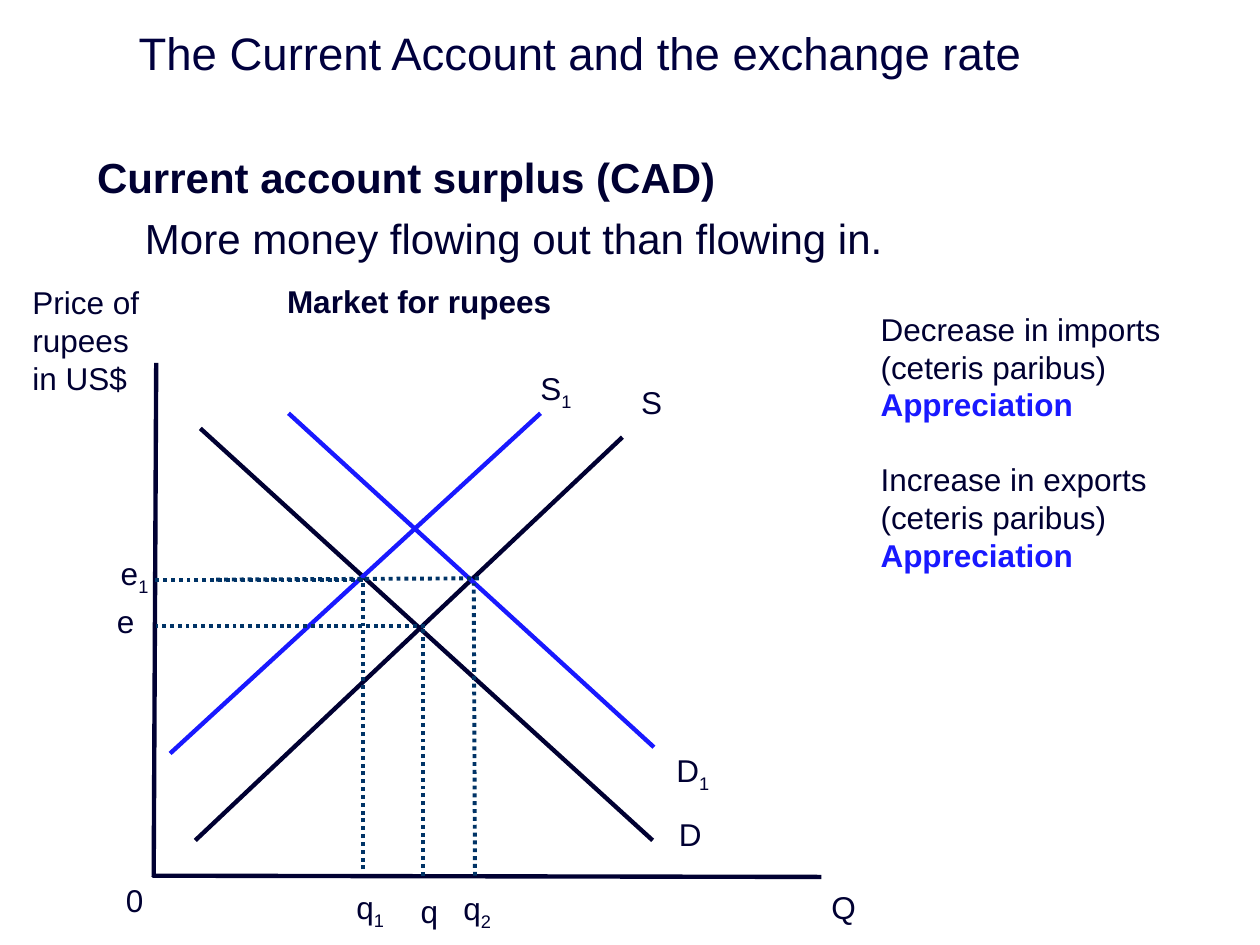
from lxml import etree
from pptx import Presentation
from pptx.dml.color import RGBColor
from pptx.enum.dml import MSO_LINE_DASH_STYLE as DASH
from pptx.enum.shapes import MSO_CONNECTOR
from pptx.enum.text import MSO_ANCHOR, MSO_AUTO_SIZE as AUTO, PP_ALIGN
from pptx.oxml.ns import qn
from pptx.util import Inches, Pt

NAVY, BLUE, TEAL, TITLE = "000032", "1919FF", "003366", "00003E"


def rgb(value):
    return RGBColor.from_string(value)


class Diagram:
    font = "Arial"

    def __init__(self, slide):
        self.s = slide

    def style(self, p, size, color=NAVY, bold=False):
        p.alignment = PP_ALIGN.LEFT
        for r in p.runs:
            r.font.name = self.font
            r.font.size = Pt(size)
            r.font.bold = bold
            r.font.color.rgb = rgb(color)

    def place(self, sp, x, y, w, h):
        sp.left, sp.top = Inches(x), Inches(y)
        sp.width, sp.height = Inches(w), Inches(h)

    def title(self, text, *box):
        sp = self.s.shapes.title
        self.place(sp, *box)
        tf = sp.text_frame
        tf.text = text
        tf.auto_size = AUTO.NONE
        tf.vertical_anchor = MSO_ANCHOR.MIDDLE
        self.style(tf.paragraphs[0], 26, TITLE)

    def body(self, heading, detail, *box):
        sp = self.s.placeholders[1]
        self.place(sp, *box)
        tf = sp.text_frame
        tf.text = f"{heading}\n{detail}"
        tf.auto_size = AUTO.NONE
        for i, p in enumerate(tf.paragraphs):
            pPr = p._p.get_or_add_pPr()
            pPr.set("marL", str(Inches(0.38)))
            pPr.set("indent", str(Inches(0 if i else -0.38)))
            etree.SubElement(pPr, qn("a:buNone"))
            p.space_before = Pt(6 * i)
            self.style(p, 24, bold=i == 0)

    def text(self, lines, x, y, w, h=0.4):
        sp = self.s.shapes.add_textbox(Inches(x), Inches(y), Inches(w), Inches(h))
        tf = sp.text_frame
        tf.word_wrap = True
        tf.auto_size = AUTO.SHAPE_TO_FIT_TEXT
        tf.text = "\n".join(line[0] for line in lines)
        for p, (_, color, bold, gap) in zip(tf.paragraphs, lines):
            if gap:
                p.space_before = Pt(gap)
            self.style(p, 18, color, bold)
        return tf

    def label(self, text, x, y, w, h=0.4, sub="", bold=False):
        p = self.text([(text, NAVY, bold, 0)], x, y, w, h).paragraphs[0]
        if sub:
            r = p.add_run()
            r.text = sub
            self.style(p, 18)
            r._r.get_or_add_rPr().set("baseline", "-25000")

    def line(self, x1, y1, x2, y2, color=NAVY, dotted=False):
        cn = self.s.shapes.add_connector(
            MSO_CONNECTOR.STRAIGHT, Inches(x1), Inches(y1), Inches(x2), Inches(y2))
        cn.line.color.rgb = rgb(color)
        cn.line.width = Pt(2.25 if dotted else 2.5)
        if dotted:
            cn.line.dash_style = DASH.ROUND_DOT
        etree.SubElement(cn._element.spPr, qn("a:effectLst"))

    def guide(self, *ends):
        self.line(*ends, color=TEAL, dotted=True)


def main():
    prs = Presentation()
    prs.slide_width, prs.slide_height = Inches(10), Inches(7.5)
    d = Diagram(prs.slides.add_slide(prs.slide_layouts[1]))

    d.title("The Current Account and the exchange rate", 1, 0.16, 9, 0.51)
    d.body("Current account surplus (CAD)",
           "More money flowing out than flowing in.", 0.67, 1.15, 8.83, 4.95)

    axes = [(1.24, 2.88, 1.22, 6.96), (6.52, 6.96, 1.21, 6.95)]
    supply, demand = (4.94, 3.47, 1.55, 6.67), (1.59, 3.4, 5.18, 6.67)
    for ends in [*axes, supply, demand]:
        d.line(*ends)

    new_supply, new_demand = (4.29, 3.28, 1.35, 5.98), (2.29, 3.28, 5.19, 5.93)
    for ends in [new_supply, new_demand]:
        d.line(*ends, color=BLUE)

    for ends in [
        (3.36, 6.95, 3.36, 4.97), (2.88, 6.9, 2.88, 4.59), (3.77, 6.95, 3.76, 4.63),
        (2.88, 4.6, 1.21, 4.6), (3.37, 4.97, 1.24, 4.97), (3.8, 4.59, 1.69, 4.6),
    ]:
        d.guide(*ends)

    for text, sub, x, y, w in [
        ("Q", "", 6.5, 7, 0.64), ("0", "", 0.9, 6.94, 0.64),
        ("S", "", 4.99, 2.99, 0.61), ("S", "1", 4.19, 2.88, 0.61),
        ("D", "", 5.29, 6.42, 0.61), ("D", "1", 5.27, 5.91, 0.61),
        ("e", "", 0.83, 4.73, 0.75), ("e", "1", 0.86, 4.35, 0.75),
        ("q", "", 3.24, 7.03, 0.44), ("q", "1", 2.73, 7, 0.44),
        ("q", "2", 3.58, 7.01, 0.44),
    ]:
        d.label(text, x, y, w, sub=sub)
    d.label("Price of rupees in US$", 0.16, 2.2, 1.07, 1.01)
    d.label("Market for rupees", 2.18, 2.19, 3.91, bold=True)

    effects = []
    for cause, gap in [("Decrease in imports", 0), ("Increase in exports", 21)]:
        effects += [(cause, NAVY, False, gap),
                    ("(ceteris paribus)", NAVY, False, 0),
                    ("Appreciation", BLUE, True, 0)]
    d.text(effects, 6.89, 2.41, 2.68, 2.22)

    prs.save("out.pptx")


if __name__ == "__main__":
    main()
